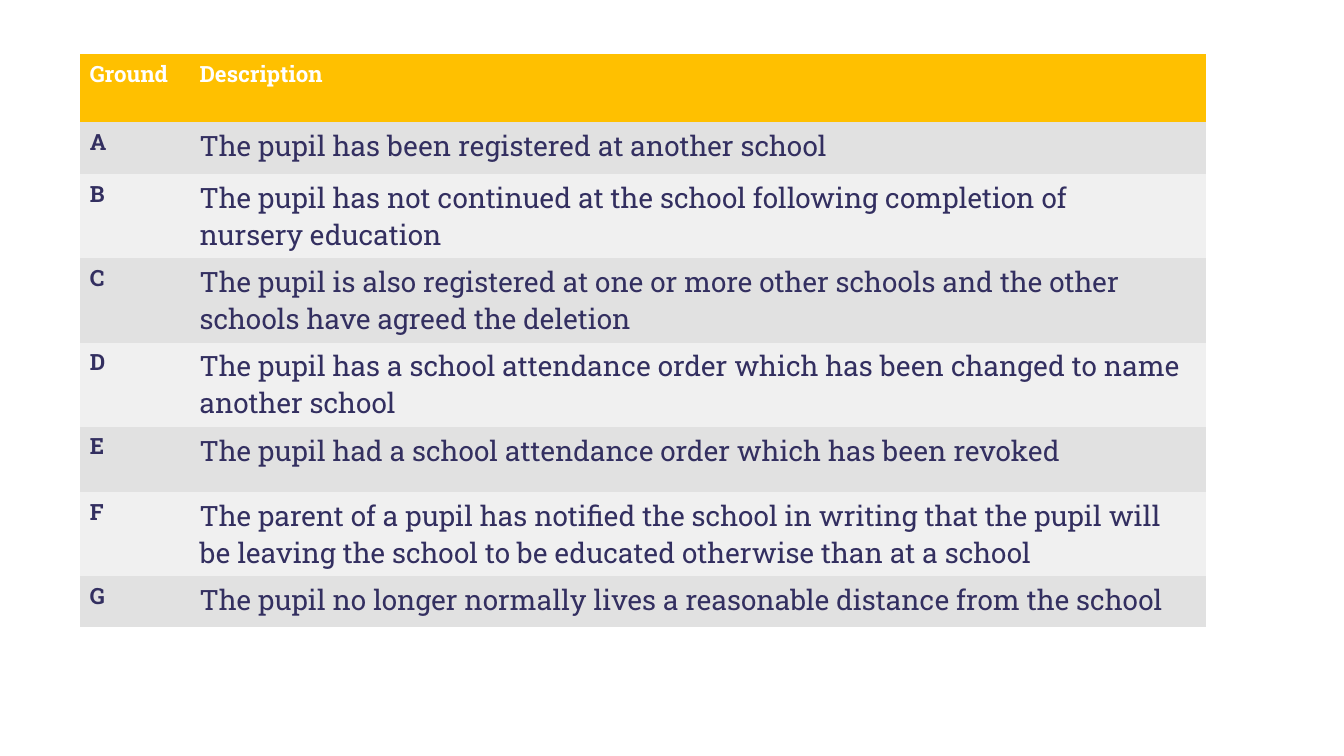
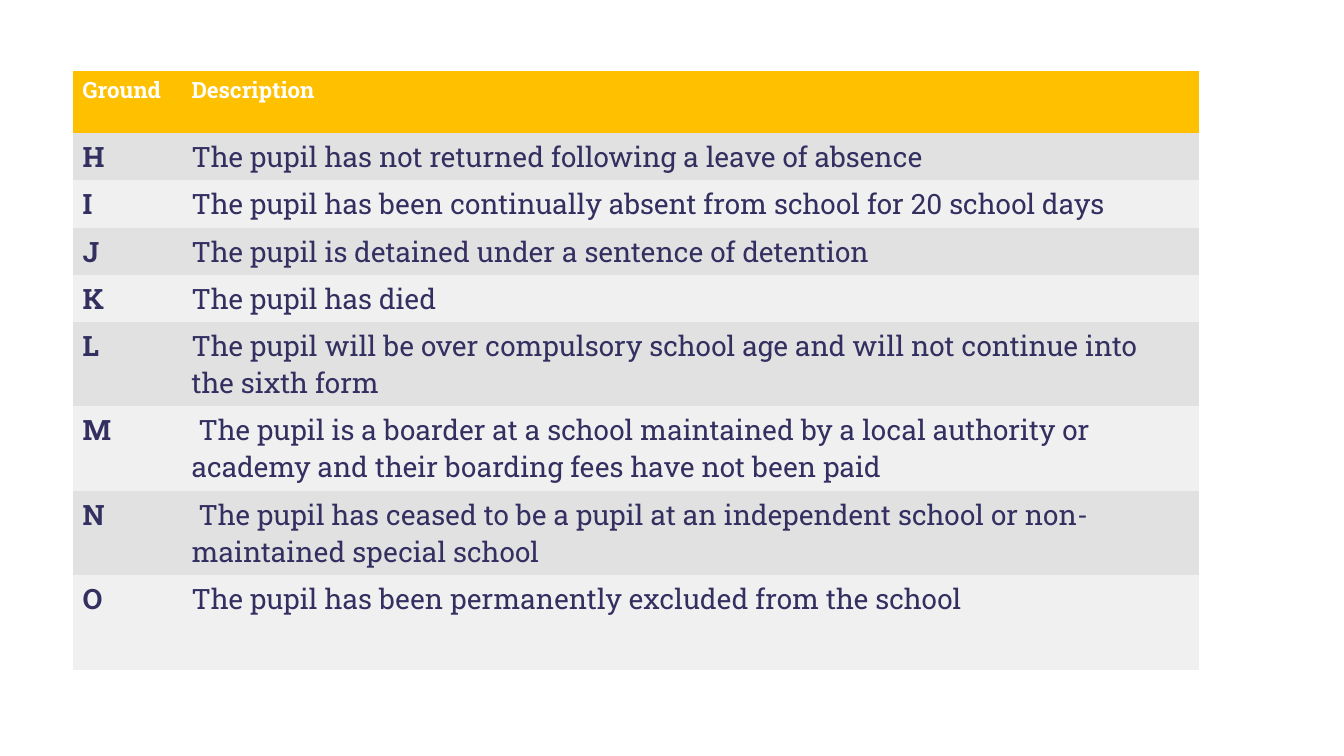
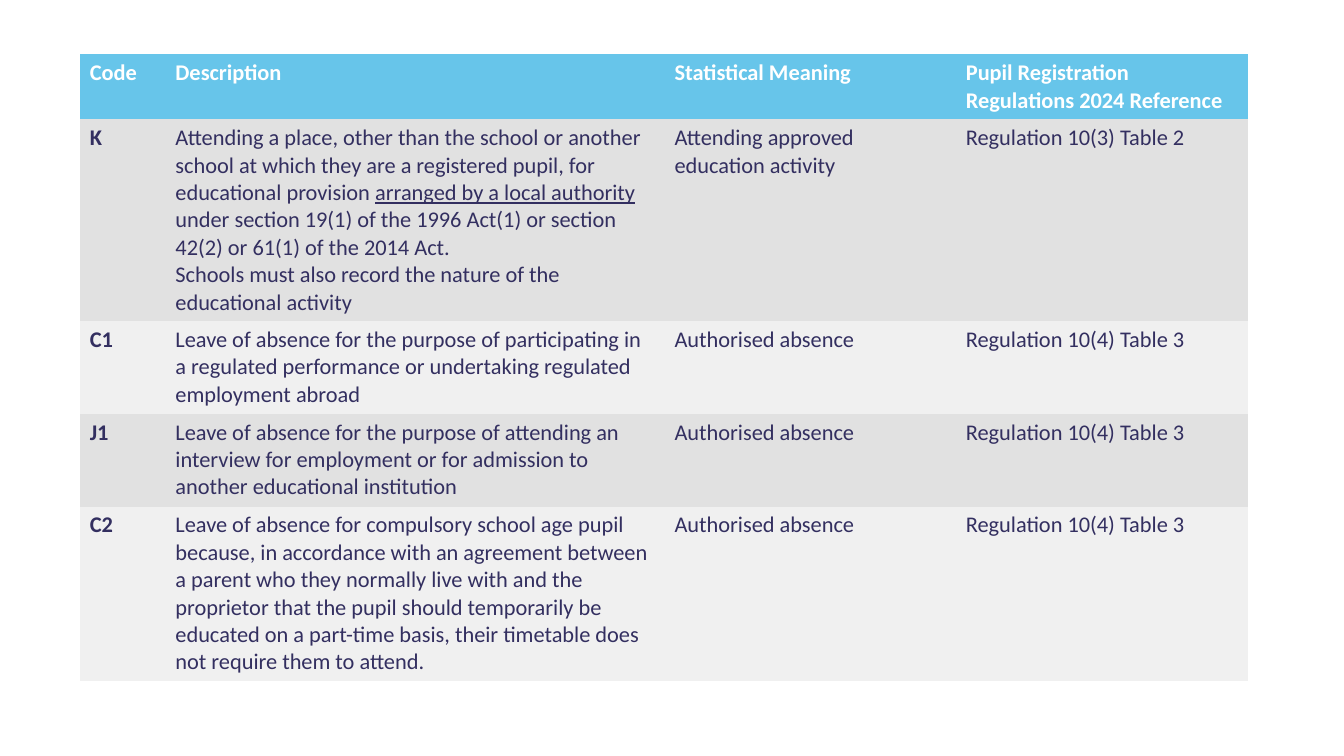
from pptx import Presentation
from pptx import util as u
from pptx.dml.color import RGBColor
from pptx.oxml import ns

COLORS = {
    "white": "FFFFFF",
    "ink": "332F60",
    "amber": "FFC000",
    "sky": "67C5EA",
    "dark_band": "E1E1E1",
    "light_band": "F0F0F0",
}
PLAIN_TABLE_STYLE = "{2D5ABB26-0587-4C30-8999-92F81FD0307C}"
UNDERLINE_MARK = "_"  # text between two marks is underlined


def color(name):
    return RGBColor.from_string(COLORS[name])


class Deck:
    """Holds the shared style and the current slide."""

    header_size = 16

    def __init__(self):
        self.presentation = Presentation()
        self.presentation.slide_width = u.Inches(13.33)
        self.presentation.slide_height = u.Inches(7.5)
        self.slide = None

    def add_slide(self):
        self.slide = self.presentation.slides.add_slide(self.presentation.slide_layouts[6])

    def fill_cell(self, cell, words, fill, font, size, ink, bold):
        cell.fill.solid()
        cell.fill.fore_color.rgb = color(fill)
        cell.text_frame.text = words
        for paragraph in cell.text_frame.paragraphs:
            parts = paragraph.text.split(UNDERLINE_MARK)
            paragraph.text = parts[0]
            for part in parts[1:]:
                paragraph.add_run().text = part
            for index, run in enumerate(paragraph.runs):
                run.font.name = font
                run.font.size = u.Pt(size)
                run.font.bold = bold
                run.font.color.rgb = color(ink)
                if index % 2:
                    run.font.underline = True

    def add_table(self, left, top, widths, heights, rows, header_fill, font, key_size, body_size):
        """Coloured header, banded rows and a bold first column."""
        shape = self.slide.shapes.add_table(
            len(rows), len(widths), u.Inches(left), u.Inches(top),
            u.Inches(sum(widths)), u.Inches(sum(heights)))
        for style in shape.element.iter(ns.qn("a:tableStyleId")):
            style.text = PLAIN_TABLE_STYLE
        table = shape.table
        for column, width in zip(table.columns, widths):
            column.width = u.Inches(width)
        for row, height in zip(table.rows, heights):
            row.height = u.Inches(height)

        for r, row in enumerate(rows):
            is_header = r == 0
            band = "dark_band" if r % 2 else "light_band"
            for c, words in enumerate(row):
                is_key = c == 0
                if is_header:
                    size = self.header_size
                else:
                    size = key_size if is_key else body_size
                self.fill_cell(
                    table.cell(r, c), words, header_fill if is_header else band, font, size,
                    "white" if is_header else "ink", is_header or is_key)

    def add_grounds(self, left, top, widths, heights, first_letter, descriptions, key_size):
        """Table of deletion grounds, lettered in sequence."""
        rows = [("Ground", "Description")]
        for index, description in enumerate(descriptions):
            rows.append((chr(ord(first_letter) + index), description))
        self.add_table(left, top, widths, heights, rows, "amber", "Roboto Slab", key_size, 20)


GROUNDS_A_TO_G = [
    "The pupil has been registered at another school",
    "The pupil has not continued at the school following completion of\nnursery education",
    "The pupil is also registered at one or more other schools and the other "
    "schools have agreed the deletion",
    "The pupil has a school attendance order which has been changed to name another school",
    "The pupil had a school attendance order which has been revoked",
    "The parent of a pupil has notified the school in writing that the pupil will\n"
    "be leaving the school to be educated otherwise than at a school",
    "The pupil no longer normally lives a reasonable distance from the school",
]

GROUNDS_H_TO_O = [
    "The pupil has not returned following a leave of absence",
    "The pupil has been continually absent from school for 20 school days",
    "The pupil is detained under a sentence of detention",
    "The pupil has died",
    "The pupil will be over compulsory school age and will not continue into\nthe sixth form",
    " The pupil is a boarder at a school maintained by a local authority or\n"
    "academy and their boarding fees have not been paid",
    " The pupil has ceased to be a pupil at an independent school or "
    "non-maintained special school",
    "The pupil has been permanently excluded from the school",
]

AUTHORISED = ("Authorised absence", "Regulation 10(4) Table 3")
CODES = [
    ("Code", "Description", "Statistical Meaning",
     "Pupil Registration Regulations 2024 Reference"),
    ("K",
     "Attending a place, other than the school or another school at which they are a "
     "registered pupil, for educational provision _arranged by a local authority_ under "
     "section 19(1) of the 1996 Act(1) or section 42(2) or 61(1) of the 2014 Act.\n"
     "Schools must also record the nature of the educational activity",
     "Attending approved education activity", "Regulation 10(3) Table 2"),
    ("C1",
     "Leave of absence for the purpose of participating in a regulated performance or "
     "undertaking regulated employment abroad", *AUTHORISED),
    ("J1",
     "Leave of absence for the purpose of attending an interview for employment or for "
     "admission to another educational institution", *AUTHORISED),
    ("C2",
     "Leave of absence for compulsory school age pupil because, in accordance with an "
     "agreement between a parent who they normally live with and the proprietor that the "
     "pupil should temporarily be educated on a part-time basis, their timetable does not "
     "require them to attend.", *AUTHORISED),
]


def main():
    deck = Deck()

    # Grounds A to G
    deck.add_slide()
    deck.add_grounds(0.79, 0.54, [1.09, 10.08],
                     [0.67, 0.52, 0.83, 0.83, 0.83, 0.65, 0.83, 0.5],
                     "A", GROUNDS_A_TO_G, key_size=16)

    # Grounds H to O
    deck.add_slide()
    deck.add_grounds(0.72, 0.7, [1.08, 10.09],
                     [0.62] + [0.47] * 4 + [0.83] * 3 + [0.95],
                     "H", GROUNDS_H_TO_O, key_size=20)

    # Attendance codes
    deck.add_slide()
    deck.add_table(0.79, 0.54, [0.85, 4.95, 2.89, 2.9], [0.64, 1.99, 0.92, 0.92, 1.73],
                   CODES, "sky", "Calibri", key_size=16, body_size=16)

    deck.presentation.save("out.pptx")


if __name__ == "__main__":
    main()
